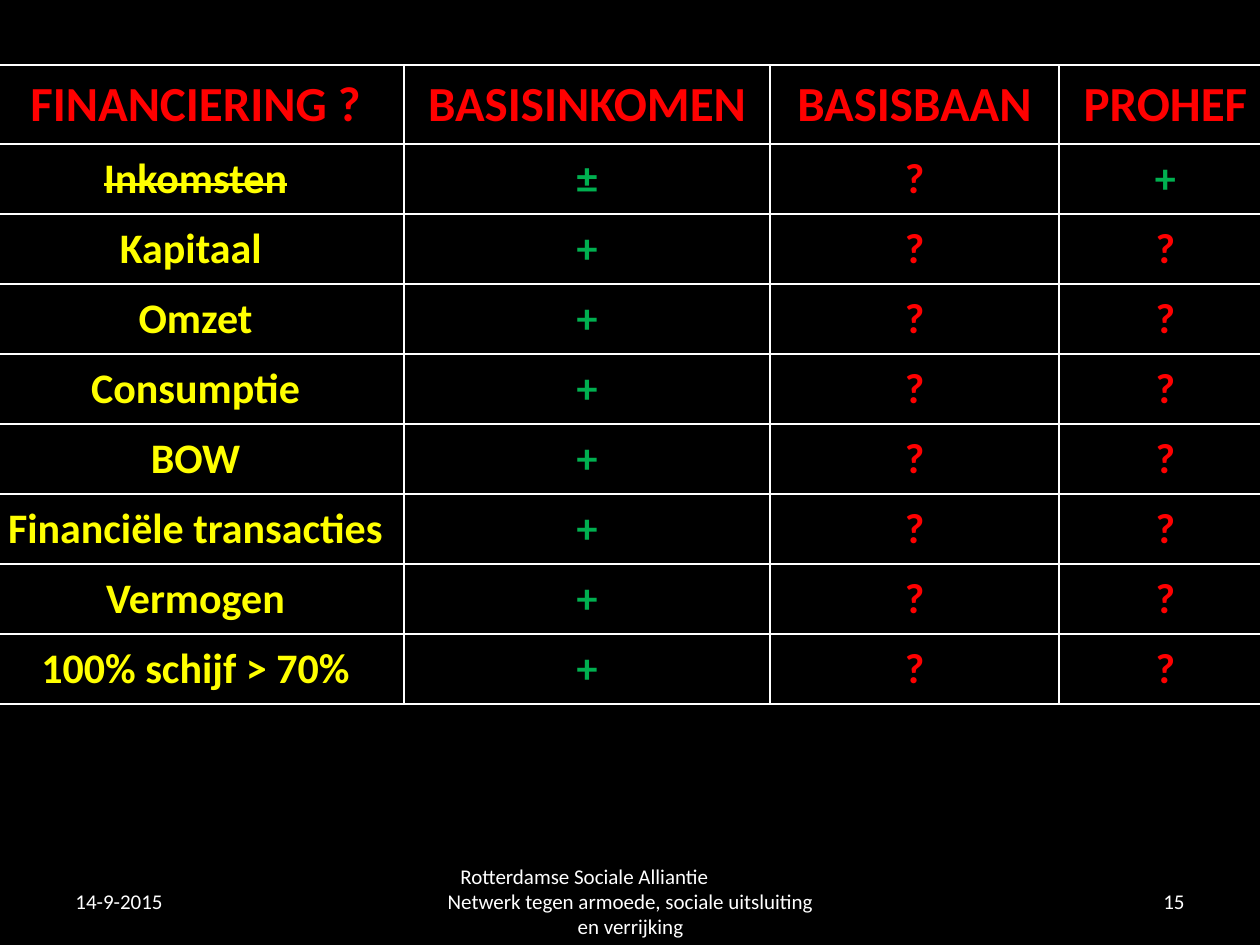
"""Build the slide comparing funding sources for three income schemes."""
import pptx
import pptx.dml.color
import pptx.enum.text
import pptx.oxml
import pptx.oxml.ns
import pptx.util

HEADERS = ["FINANCIERING ?", "BASISINKOMEN", "BASISBAAN", "PROHEF"]
SOURCES = [
    ("Inkomsten", "±", "?", "+"),
    ("Kapitaal ", "+", "?", "?"),
    ("Omzet", "+", "?", "?"),
    ("Consumptie", "+", "?", "?"),
    ("BOW", "+", "?", "?"),
    ("Financiële transacties", "+", "?", "?"),
    ("Vermogen", "+", "?", "?"),
    ("100% schijf > 70%", "+", "?", "?"),
]
STRUCK = {"Inkomsten"}
ALIGN = pptx.enum.text.PP_ALIGN
FOOTERS = [
    (63, 294, [("14-9-2015", ALIGN.LEFT, 0)]),
    (431, 399, [
        ("Rotterdamse Sociale Alliantie", ALIGN.LEFT, 17),
        ("Netwerk tegen armoede, sociale uitsluiting en verrijking", ALIGN.CENTER, 0),
    ]),
    (903, 294, [("15", ALIGN.RIGHT, 0)]),
]
THEME = {
    "font": "Calibri", "background": "000000", "line": "FFFFFF", "footer": "FFFFFF",
    "header": "FF0000", "source": "FFFF00", "?": "FF0000", "+": "00B050", "±": "00B050",
    "header_size": 28, "cell_size": 24, "footer_size": 12,
}
TABLE_LEFT, TABLE_TOP = -13, 65
COLUMN_WIDTHS = [417, 366, 289, 213]
ROW_HEIGHTS = [79] + [70] * len(SOURCES)
FOOTER_TOP, FOOTER_HEIGHT = 876, 50
MARGIN_X, MARGIN_Y = 19, 9


def px(length):
    return pptx.util.Emu(round(length * 914400 / 126))


def color(name):
    return pptx.dml.color.RGBColor.from_string(THEME[name])


def style(paragraph, size, color_name, alignment, bold=False):
    paragraph.alignment = alignment
    font = paragraph.font
    font.name = THEME["font"]
    font.size = pptx.util.Pt(THEME[size])
    font.bold = bold
    font.color.rgb = color(color_name)


def draw_borders(cell):
    properties = cell._tc.get_or_add_tcPr()
    for position, side in enumerate(("lnL", "lnR", "lnT", "lnB")):
        properties.insert(position, pptx.oxml.parse_xml(
            f'<a:{side} {pptx.oxml.ns.nsdecls("a")} w="12700"><a:solidFill>'
            f'<a:srgbClr val="{THEME["line"]}"/></a:solidFill></a:{side}>'))


def fill_cell(cell, text, size, color_name):
    cell.text = text
    cell.fill.background()
    cell.vertical_anchor = pptx.enum.text.MSO_ANCHOR.MIDDLE
    cell.margin_left = cell.margin_right = px(MARGIN_X)
    cell.margin_top = cell.margin_bottom = px(MARGIN_Y)
    paragraph = cell.text_frame.paragraphs[0]
    style(paragraph, size, color_name, ALIGN.CENTER, bold=True)
    if text in STRUCK:
        paragraph.runs[0]._r.get_or_add_rPr().set("strike", "sngStrike")
    draw_borders(cell)


def add_funding_table(slide):
    table = slide.shapes.add_table(
        len(ROW_HEIGHTS), len(COLUMN_WIDTHS), px(TABLE_LEFT), px(TABLE_TOP),
        px(sum(COLUMN_WIDTHS)), px(sum(ROW_HEIGHTS))).table
    table.first_row = table.horz_banding = False
    for column, width in zip(table.columns, COLUMN_WIDTHS):
        column.width = px(width)
    for row, height in zip(table.rows, ROW_HEIGHTS):
        row.height = px(height)
    for index, header in enumerate(HEADERS):
        fill_cell(table.cell(0, index), header, "header_size", "header")
    for row_index, (source, *marks) in enumerate(SOURCES, start=1):
        fill_cell(table.cell(row_index, 0), source, "cell_size", "source")
        for column_index, mark in enumerate(marks, start=1):
            fill_cell(table.cell(row_index, column_index), mark, "cell_size", mark)


def add_footer(slide, left, width, lines):
    frame = slide.shapes.add_textbox(
        px(left), px(FOOTER_TOP), px(width), px(FOOTER_HEIGHT)).text_frame
    frame.word_wrap = True
    frame.vertical_anchor = pptx.enum.text.MSO_ANCHOR.MIDDLE
    frame.text = "\n".join(text for text, _, _ in lines)
    for paragraph, (_, alignment, indent) in zip(frame.paragraphs, lines):
        style(paragraph, "footer_size", "footer", alignment)
        if indent:
            paragraph._p.get_or_add_pPr().set("marL", str(px(indent)))


def main():
    presentation = pptx.Presentation()
    presentation.slide_width, presentation.slide_height = px(1260), px(945)
    slide = presentation.slides.add_slide(presentation.slide_layouts[6])
    slide.background.fill.solid()
    slide.background.fill.fore_color.rgb = color("background")
    for footer in FOOTERS:
        add_footer(slide, *footer)
    add_funding_table(slide)
    presentation.save("out.pptx")


if __name__ == "__main__":
    main()
